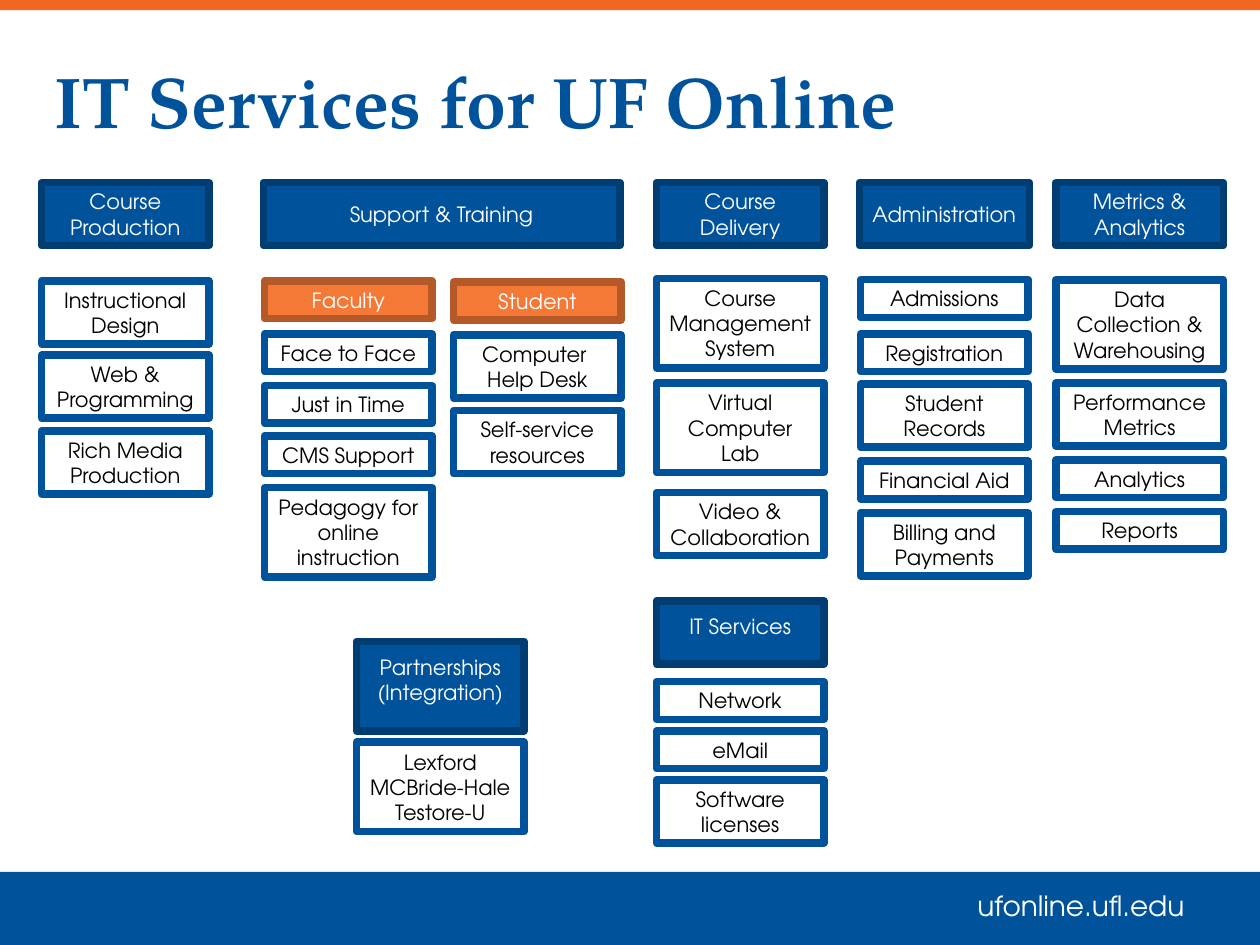
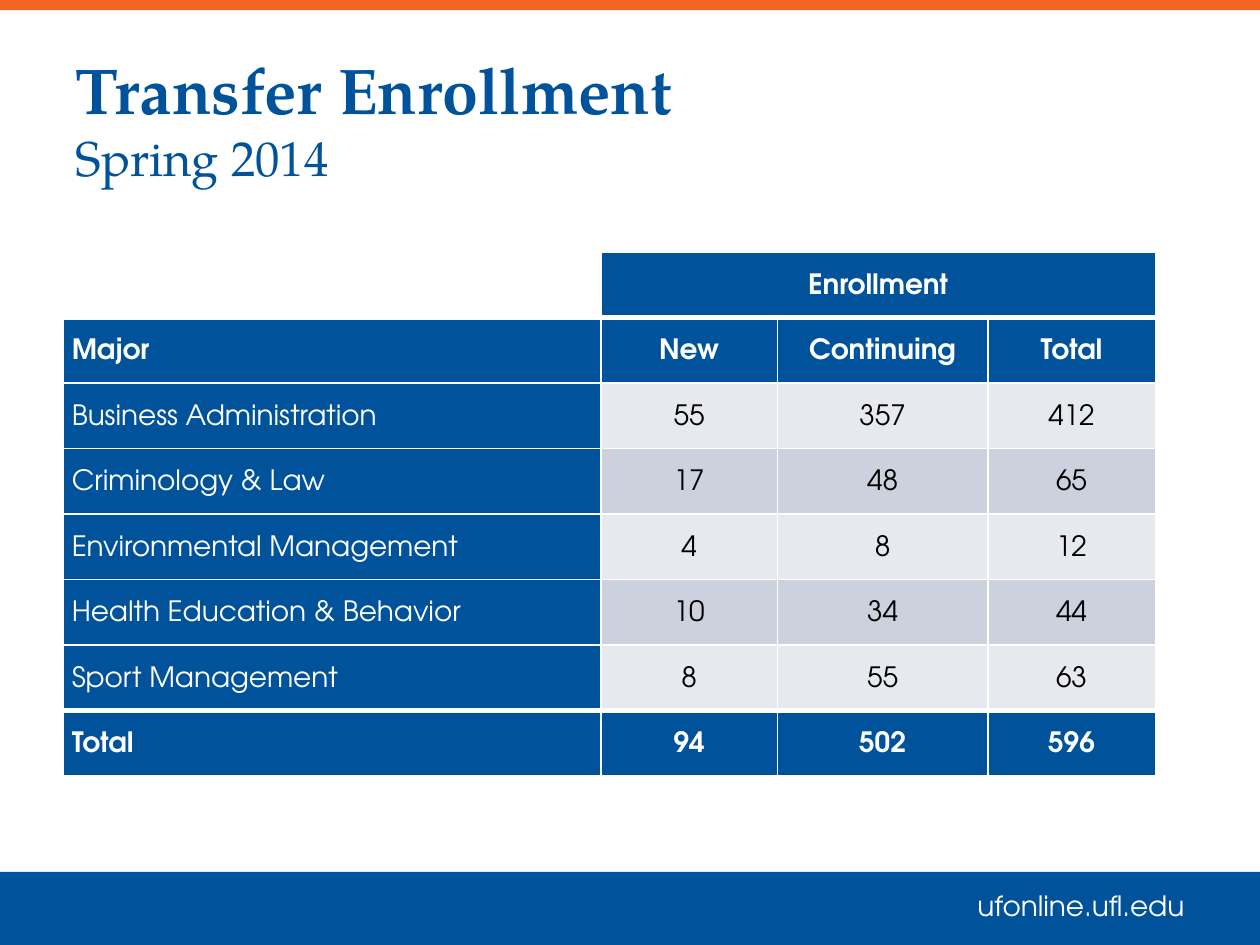
"""Build two slides on online learning services and enrollment."""
from dataclasses import dataclass

from lxml.etree import SubElement
from pptx import Presentation
from pptx.dml.color import RGBColor
from pptx.enum.shapes import MSO_SHAPE
from pptx.enum.text import MSO_ANCHOR, MSO_AUTO_SIZE, PP_ALIGN
from pptx.oxml.ns import qn
from pptx.util import Emu, Pt

SCALE = 9144


@dataclass(frozen=True)
class Theme:
    """Colours, fonts and type sizes."""
    blue: str = "00539B"
    navy: str = "003D73"
    orange: str = "F26522"
    amber: str = "F47836"
    rust: str = "B55928"
    white: str = "FFFFFF"
    black: str = "000000"
    light: str = "E7E9EF"
    grey: str = "CCD1DE"
    serif: str = "TeX Gyre Pagella"
    sans: str = "TeX Gyre Adventor"
    title: float = 41
    head: float = 36.9
    under: float = 27.9
    body: float = 16
    small: float = 12
    edge: float = 4.33


THEME = Theme()


def px(count):
    """Turn px, a hundred to the inch, into EMU."""
    return Emu(count * SCALE)


def rgb(code):
    """Turn a hex code into a colour."""
    return RGBColor.from_string(code)


def write(frame, text, font=THEME.sans, size=THEME.small, ink=THEME.black,
          bold=False, align=PP_ALIGN.LEFT, lead=None, pads=(10, 5, 10, 5),
          anchor=MSO_ANCHOR.MIDDLE):
    """Add each line of text to a frame as a paragraph."""
    frame.word_wrap = True
    frame.auto_size = MSO_AUTO_SIZE.NONE
    frame.vertical_anchor = anchor
    (frame.margin_left, frame.margin_top,
     frame.margin_right, frame.margin_bottom) = map(px, pads)
    for line in text.split("\n"):
        para = frame.add_paragraph() if frame.text else frame.paragraphs[0]
        para.alignment = align
        if lead:
            para.line_spacing = lead
        run = para.add_run()
        run.text = line
        run.font.name = font
        run.font.size = Pt(size)
        run.font.bold = bold
        run.font.color.rgb = rgb(ink)


def border(cell, top, base):
    """Draw white lines around a cell, with top and base widths in points."""
    props = cell._tc.get_or_add_tcPr()
    for side, width in (("L", 1), ("R", 1), ("T", top), ("B", base)):
        line = SubElement(props, qn(f"a:ln{side}"), w=str(Pt(width)))
        fill = SubElement(line, qn("a:solidFill"))
        SubElement(fill, qn("a:srgbClr"), val=THEME.white)


class Deck:
    """Hold the style, the deck and the current slide."""

    def __init__(self, theme):
        """Start an empty deck of 10 by 7.5 inches."""
        self.theme = theme
        self.show = Presentation()
        self.show.slide_width, self.show.slide_height = px(1000), px(750)
        self.slide = None

    def start(self, place, *lines):
        """Add a slide with title lines of text, size and weight."""
        self.slide = self.show.slides.add_slide(self.show.slide_layouts[5])
        title = self.slide.shapes.title
        title.left, title.top, title.width, title.height = map(px, place)
        for text, size, bold in lines:
            write(title.text_frame, text, font=self.theme.serif, size=size,
                  ink=self.theme.blue, bold=bold)

    def block(self, place, fill, edge=None):
        """Add a rectangle."""
        shape = self.slide.shapes.add_shape(MSO_SHAPE.RECTANGLE, *map(px, place))
        shape.shadow.inherit = False
        shape.fill.solid()
        shape.fill.fore_color.rgb = rgb(fill)
        if edge:
            shape.line.color.rgb = rgb(edge)
            shape.line.width = Pt(self.theme.edge)
        else:
            shape.line.fill.background()
        return shape

    def label(self, place, text, **style):
        """Add a text box."""
        box = self.slide.shapes.add_textbox(*map(px, place))
        write(box.text_frame, text, **style)
        return box

    def frame(self):
        """Put the bands and the web address on the slide master."""
        parts = (
            self.block((0, 0, 1000, 8), self.theme.orange),
            self.block((0, 692, 1000, 58), self.theme.blue),
            self.label((750, 700, 200, 37), "ufonline.ufl.edu",
                       size=self.theme.body, ink=self.theme.white,
                       align=PP_ALIGN.RIGHT, anchor=MSO_ANCHOR.TOP))
        tree = self.show.slide_master.element.cSld.spTree
        for count, part in enumerate(parts):
            part.element.nvSpPr.cNvPr.set("id", str(100 + count))
            tree.insert(2 + count, part.element)

    def card(self, place, text, kind="item", pads=(10, 5, 10, 5)):
        """Add a box for a head, a group or an item."""
        look = self.theme
        fill, edge, ink = {
            "head": (look.blue, look.navy, look.white),
            "group": (look.amber, look.rust, look.white),
            "item": (look.white, look.blue, look.black)}[kind]
        shape = self.block(place, fill, edge)
        write(shape.text_frame, text, ink=ink, align=PP_ALIGN.CENTER, pads=pads)

    def table(self, left, top, widths, height, rows):
        """Add the enrollment table, with heavy rules by its end rows."""
        look, last = self.theme, len(rows) - 1
        grid = self.slide.shapes.add_table(
            len(rows), len(widths), px(left), px(top),
            px(sum(widths)), px(height * len(rows))).table
        grid.first_row = grid.horz_banding = False
        for col, width in zip(grid.columns, widths):
            col.width = px(width)
        rules = [3 if edge in (1, last) else 1 for edge in range(last + 2)]
        for y, row in enumerate(rows):
            grid.rows[y].height = px(height)
            strong = y in (0, 1, last)
            for x, text in enumerate(row):
                cell = grid.cell(y, x)
                border(cell, rules[y], rules[y + 1])
                cell.vertical_anchor = MSO_ANCHOR.MIDDLE
                cell.margin_left = cell.margin_right = px(7)
                cell.margin_top = cell.margin_bottom = px(0)
                if x == y == 0:
                    cell.fill.background()
                    continue
                dark = strong or x == 0
                cell.fill.solid()
                cell.fill.fore_color.rgb = rgb(
                    look.blue if dark else (look.light, look.grey)[y % 2])
                if text:
                    self.fill(cell, text, dark, strong, x)
        grid.cell(0, 1).merge(grid.cell(0, len(widths) - 1))

    def fill(self, cell, text, dark, strong, col):
        """Write the text of a table cell."""
        para = cell.text_frame.paragraphs[0]
        para.alignment = PP_ALIGN.CENTER if col else PP_ALIGN.LEFT
        para.line_spacing = 1.15
        run = para.add_run()
        run.text = text
        run.font.name = self.theme.sans
        run.font.size = Pt(self.theme.body)
        run.font.bold = strong
        run.font.color.rgb = rgb(self.theme.white if dark else self.theme.black)


WIDE = 133
TALL = {1: 30, 2: 50, 3: 71}

HEADS = [
    (33, 145, WIDE, 50, "Course Production", 10),
    (209, 145, 283, 50, "Support & Training", 10),
    (521, 145, WIDE, 50, "Course Delivery", 10),
    (682, 145, 135, 50, "Administration", 10),
    (838, 145, WIDE, 50, "Metrics & Analytics", 10),
    (283, 509, WIDE, 71, "Partnerships (Integration)", 20),
    (521, 477, WIDE, 50, "IT Services", 20),
]

GROUPS = [(210, 223, "Faculty"), (360, 224, "Student")]

STACKS = {
    33: [(223, 2, "Instructional Design"), (282, 2, "Web & Programming"),
         (342, 2, "Rich Media Production")],
    210: [(265, 1, "Face to Face"), (306, 1, "Just in Time"),
          (346, 1, "CMS Support"), (387, 3, "Pedagogy for online instruction")],
    360: [(266, 2, "Computer \nHelp Desk"), (326, 2, "Self-service resources")],
    521: [(221, 3, "Course Management System"), (304, 3, "Virtual Computer Lab"),
          (391, 2, "Video & Collaboration"), (541, 1, "Network"),
          (580, 1, "eMail"), (619, 2, "Software licenses")],
    683: [(222, 1, "Admissions"), (265, 1, "Registration"),
          (305, 2, "Student Records"), (366, 1, "Financial Aid"),
          (407, 2, "Billing and Payments")],
    838: [(222, 3, "Data Collection & Warehousing"),
          (304, 2, "Performance Metrics"), (365, 1, "Analytics"),
          (406, 1, "Reports")],
    283: [(589, 3, "Lexford\nMCBride-Hale\nTestore-U")],
}

ROWS = [
    ("", "Enrollment", "", ""),
    ("Major", "New", "Continuing", "Total"),
    ("Business Administration", "55", "357", "412"),
    ("Criminology & Law", "17", "48", "65"),
    ("Environmental Management", "4", "8", "12"),
    ("Health Education & Behavior", "10", "34", "44"),
    ("Sport Management", "8", "55", "63"),
    ("Total", "94", "502", "596"),
]


def main():
    """Build and save the deck."""
    deck = Deck(THEME)
    deck.start((33, 33, 917, 92), ("IT Services for UF Online", THEME.title, True))
    deck.frame()
    for left, top, width, height, text, base in HEADS:
        deck.card((left, top, width, height), text, "head", (10, 10, 10, base))
    for left, top, text in GROUPS:
        deck.card((left, top, WIDE, TALL[1]), text, "group")
    for left, stack in STACKS.items():
        for top, lines, text in stack:
            deck.card((left, top, WIDE, TALL[lines]), text)

    deck.start((50, 33, 900, 122), ("Transfer Enrollment", THEME.head, True),
               ("Spring 2014", THEME.under, False))
    deck.table(50, 200, (427, 140, 167, 133), 52, ROWS)
    deck.show.save("out.pptx")


if __name__ == "__main__":
    main()
